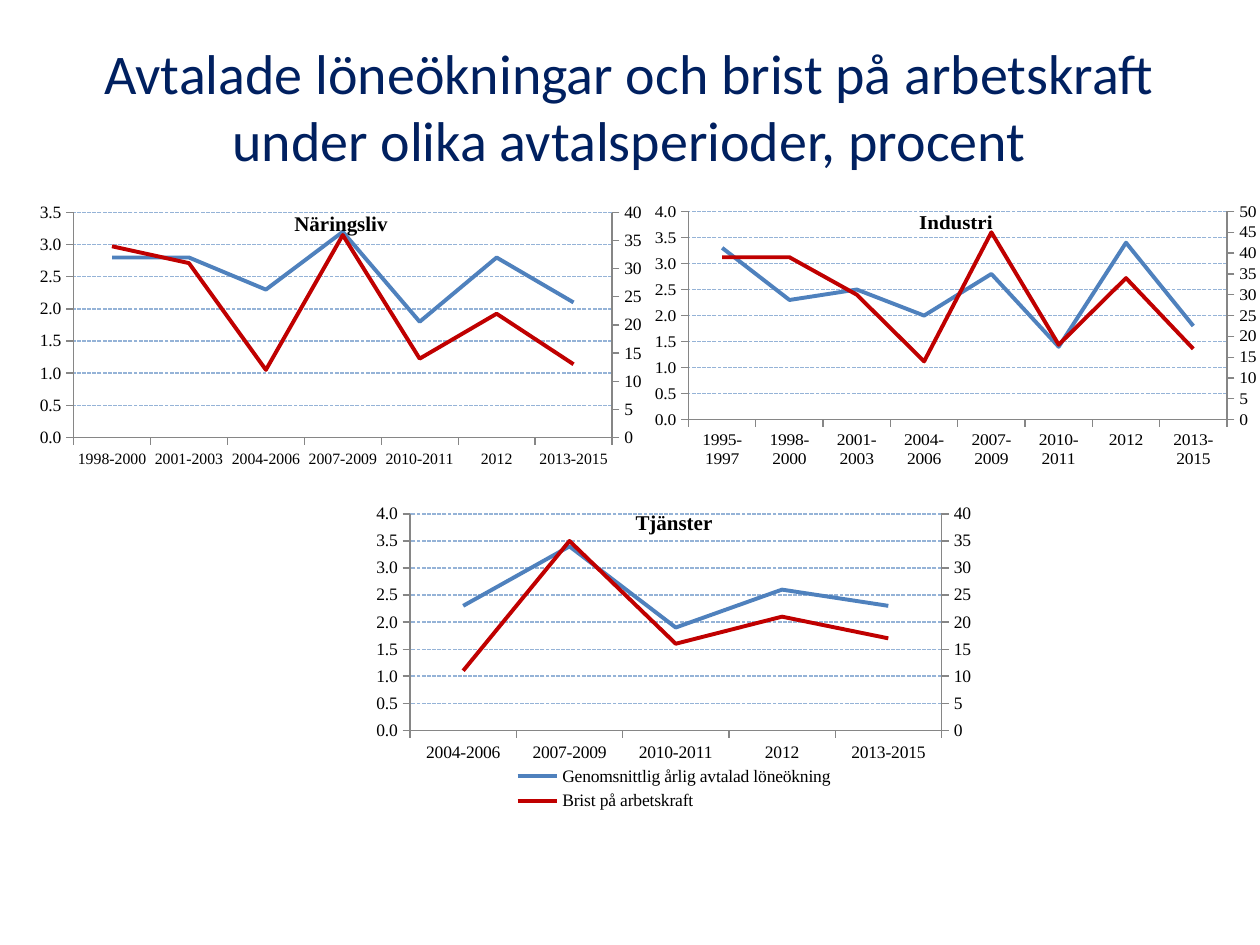
from copy import deepcopy

from lxml import etree
from pptx import Presentation
from pptx import util as u
from pptx.chart.data import CategoryChartData
from pptx.dml.color import RGBColor
from pptx.enum import chart as ch, dml, text
from pptx.oxml.ns import qn

# Content
TITLE = "Avtalade löneökningar och brist på arbetskraft under olika avtalsperioder, procent"
WAGES, SHORTAGE = "Genomsnittlig årlig avtalad löneökning", "Brist på arbetskraft"
PERIODS = ["1995-1997", "1998-2000", "2001-2003", "2004-2006",
           "2007-2009", "2010-2011", "2012", "2013-2015"]
# Each chart covers the last periods, as many as it has values
CHARTS = [
    dict(title="Näringsliv", box=(35, 195, 612, 273), plot_height=0.83, label_size=9,
         wages=[2.8, 2.8, 2.3, 3.2, 1.8, 2.8, 2.1],
         shortage=[34, 31, 12, 36, 14, 22, 13], left_max=3.5, right_max=40, legend=False),
    dict(title="Industri", box=(650, 195, 612, 273), plot_height=0.82, label_size=10,
         wages=[3.3, 2.3, 2.5, 2.0, 2.8, 1.4, 3.4, 1.8],
         shortage=[39, 39, 30, 14, 45, 18, 34, 17], left_max=4, right_max=50, legend=False),
    dict(title="Tjänster", box=(372, 493, 604, 323), plot_height=0.67, label_size=10,
         wages=[2.3, 3.4, 1.9, 2.6, 2.3],
         shortage=[11, 35, 16, 21, 17], left_max=4, right_max=40, legend=True),
]
COLORS = dict(title="002060", text="000000", axis="868686", grid="95B3D7",
              wages="4F81BD", shortage="C00000")
SERIF = "Times New Roman"


def px(length):
    return u.Emu(round(length * 914400 / 126))


def color(name):
    return RGBColor.from_string(COLORS[name])


def set_font(font, name, size, color_name, bold=False):
    font.name, font.size, font.bold = name, u.Pt(size), bold
    font.color.rgb = color(color_name)


def set_line(line, color_name, width):
    line.color.rgb = color(color_name)
    line.width = u.Pt(width)


def set_values(element, **values):
    for tag, value in values.items():
        element.find(qn("c:" + tag)).set("val", value)


def style_axis(axis, size):
    axis.major_tick_mark = ch.XL_TICK_MARK.OUTSIDE
    axis.minor_tick_mark = ch.XL_TICK_MARK.NONE
    set_font(axis.tick_labels.font, SERIF, size, "text")
    set_line(axis.format.line, "axis", 0.75)


def set_plot_layout(plot_area, height):
    old = plot_area.find(qn("c:layout"))
    if old is not None:
        plot_area.remove(old)
    layout = etree.Element(qn("c:layout"))
    manual = etree.SubElement(layout, qn("c:manualLayout"))
    for tag, value in [("layoutTarget", "inner"), ("xMode", "edge"), ("yMode", "edge"),
                       ("x", 0.063), ("y", 0.065), ("w", 0.88), ("h", height)]:
        etree.SubElement(manual, qn("c:" + tag)).set("val", str(value))
    plot_area.insert(0, layout)


def move_to_right_axis(plot_area, maximum):
    """Give the second series its own line plot and value axis."""
    left_plot = plot_area.find(qn("c:lineChart"))
    right_plot = deepcopy(left_plot)
    left_plot.remove(left_plot.findall(qn("c:ser"))[1])
    right_plot.remove(right_plot.findall(qn("c:ser"))[0])
    left_plot.addnext(right_plot)
    for axis_id, value in zip(right_plot.findall(qn("c:axId")), ("5001", "5002")):
        axis_id.set("val", value)

    left_values = plot_area.find(qn("c:valAx"))
    right_values = deepcopy(left_values)
    right_values.remove(right_values.find(qn("c:majorGridlines")))
    set_values(right_values, axId="5002", crossAx="5001", axPos="r",
               crosses="max", majorUnit="5")
    set_values(right_values.find(qn("c:scaling")), max=str(maximum))
    right_values.find(qn("c:numFmt")).set("formatCode", "0")
    hidden_categories = deepcopy(plot_area.find(qn("c:catAx")))
    set_values(hidden_categories, axId="5001", crossAx="5002", delete="1")
    left_values.addnext(right_values)
    right_values.addnext(hidden_categories)


def add_line_chart(slide, item):
    data = CategoryChartData()
    data.categories = PERIODS[-len(item["wages"]):]
    data.add_series(WAGES, item["wages"], "0.0")
    data.add_series(SHORTAGE, item["shortage"], "0")
    chart = slide.shapes.add_chart(
        ch.XL_CHART_TYPE.LINE, *map(px, item["box"]), data).chart
    set_font(chart.font, SERIF, 10, "text")

    # Title laid over the plot
    paragraph = chart.chart_title.text_frame.paragraphs[0]
    paragraph.text = item["title"]
    set_font(paragraph.runs[0].font, SERIF, 12, "text", bold=True)
    set_values(chart.chart_title._element, overlay="1")

    # Legend
    chart.has_legend = item["legend"]
    if item["legend"]:
        chart.legend.position = ch.XL_LEGEND_POSITION.BOTTOM
        chart.legend.include_in_layout = False
        set_font(chart.legend.font, SERIF, 10, "text")

    # Lines
    chart.plots[0].vary_by_categories = False
    for series, name in zip(chart.plots[0].series, ("wages", "shortage")):
        series.smooth = False
        set_line(series.format.line, name, 2.25)

    # Axes
    style_axis(chart.category_axis, item["label_size"])
    chart.category_axis.tick_label_position = ch.XL_TICK_LABEL_POSITION.LOW
    values = chart.value_axis
    style_axis(values, 10)
    values.minimum_scale, values.maximum_scale = 0, item["left_max"]
    values.major_unit = 0.5
    values.tick_labels.number_format = "#,##0.0"
    values.tick_labels.number_format_is_linked = False
    values.has_major_gridlines = True
    grid = values.major_gridlines.format.line
    set_line(grid, "grid", 0.75)
    grid.dash_style = dml.MSO_LINE.SQUARE_DOT

    plot_area = chart._chartSpace.chart.plotArea
    set_plot_layout(plot_area, item["plot_height"])
    move_to_right_axis(plot_area, item["right_max"])


def main():
    presentation = Presentation()
    presentation.slide_width, presentation.slide_height = px(1260), px(945)
    slide = presentation.slides.add_slide(presentation.slide_layouts[6])

    # Heading
    frame = slide.shapes.add_textbox(*map(px, (63, 16, 1133, 179))).text_frame
    frame.word_wrap = True
    frame.vertical_anchor = text.MSO_ANCHOR.MIDDLE
    frame.text = TITLE
    paragraph = frame.paragraphs[0]
    paragraph.alignment = text.PP_ALIGN.CENTER
    set_font(paragraph.runs[0].font, "Calibri", 32, "title")

    for item in CHARTS:
        add_line_chart(slide, item)
    presentation.save("out.pptx")


if __name__ == "__main__":
    main()
